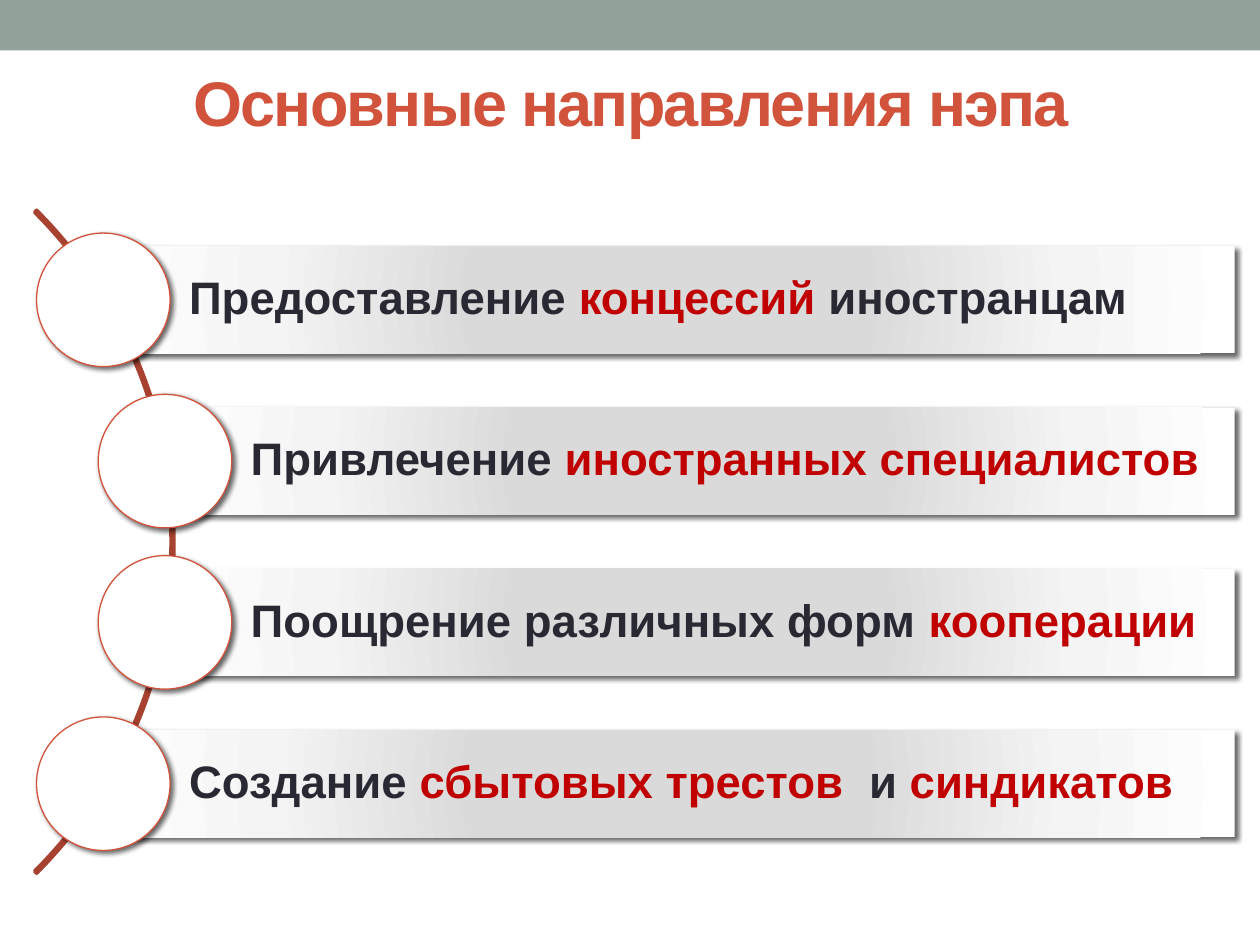
from lxml import etree
from pptx import Presentation
from pptx.dml.color import RGBColor
from pptx.enum.shapes import MSO_SHAPE
from pptx.enum.text import MSO_ANCHOR, MSO_AUTO_SIZE, PP_ALIGN
from pptx.oxml import parse_xml
from pptx.oxml.ns import nsdecls, qn
from pptx.util import Inches, Pt

RECTANGLE, OVAL, BLOCK_ARC = MSO_SHAPE.RECTANGLE, MSO_SHAPE.OVAL, MSO_SHAPE.BLOCK_ARC
MIDDLE, LEFT, CENTER = MSO_ANCHOR.MIDDLE, PP_ALIGN.LEFT, PP_ALIGN.CENTER
NO_AUTOFIT = MSO_AUTO_SIZE.NONE

THEME = {
    "font": "Arial",
    "title_size": Pt(36),
    "item_size": Pt(26),
    "band": RGBColor.from_string("93A299"),
    "title": RGBColor.from_string("D2533C"),
    "arc": RGBColor.from_string("A84230"),
    "text": RGBColor.from_string("292934"),
    "accent": RGBColor.from_string("C00000"),
    "circle": RGBColor.from_string("FFFFFF"),
    "bar_stops": [(0, "DADADA"), (34, "DADADA"), (70, "F4F4F4"), (100, "FFFFFF")],
}

ITEMS = [
    [("Предоставление ", "text"), ("концессий ", "accent"), ("иностранцам", "text")],
    [("Привлечение ", "text"), ("иностранных специалистов", "accent")],
    [("Поощрение различных форм ", "text"), ("кооперации", "accent")],
    [("Создание ", "text"), ("сбытовых трестов  ", "accent"), ("и ", "text"), ("синдикатов", "accent")],
]

FIRST_ROW, ROW_PITCH = 2.38, 1.28
OUTER_COLUMN, INNER_COLUMN, BAR_RIGHT = 0.82, 1.31, 9.8
BAR_HEIGHT, CIRCLE_SIZE, ARC_SIZE = 0.85, 1.06, 7.44


def add_plain_shape(kind, left, top, width, height):
    shape = slide.shapes.add_shape(kind, Inches(left), Inches(top), Inches(width), Inches(height))
    shape.fill.background()
    shape.line.fill.background()
    shape.shadow.inherit = False
    return shape


def add_drop_shadow(shape):
    effects = shape._element.spPr.find(qn("a:effectLst"))
    shadow = etree.SubElement(effects, qn("a:outerShdw"), blurRad=str(Pt(3)), dist=str(Pt(2)),
                              dir="2700000", rotWithShape="0")
    color = etree.SubElement(shadow, qn("a:srgbClr"), val="000000")
    etree.SubElement(color, qn("a:alpha"), val="60000")


presentation = Presentation()
presentation.slide_width = Inches(10)
presentation.slide_height = Inches(7.5)
slide = presentation.slides.add_slide(presentation.slide_layouts[5])

band = add_plain_shape(RECTANGLE, 0, 0, 10, 0.4)
band.fill.solid()
band.fill.fore_color.rgb = THEME["band"]

title = slide.shapes.title
title.left, title.top, title.width, title.height = Inches(0.51), Inches(0.44), Inches(9), Inches(0.73)
title.text_frame.text = "Основные направления нэпа"
title.text_frame.auto_size = NO_AUTOFIT
title.text_frame.vertical_anchor = MIDDLE
title_paragraph = title.text_frame.paragraphs[0]
title_paragraph.alignment = CENTER
title_run = title_paragraph.runs[0]
title_run.font.name = THEME["font"]
title_run.font.size = THEME["title_size"]
title_run.font.bold = True
title_run.font.color.rgb = THEME["title"]
title_run._r.get_or_add_rPr().set("spc", "-100")

arc_top = FIRST_ROW + 1.5 * ROW_PITCH - ARC_SIZE / 2
arc = add_plain_shape(BLOCK_ARC, -6.06, arc_top, ARC_SIZE, ARC_SIZE)
for index, adjustment in enumerate((189, 27, 0.003)):
    arc.adjustments[index] = adjustment
arc.line.color.rgb = THEME["arc"]
arc.line.width = Pt(2.08)

stops = "".join(f'<a:gs pos="{position * 1000}"><a:srgbClr val="{color}"/></a:gs>'
                for position, color in THEME["bar_stops"])
gradient_xml = (f'<a:gradFill {nsdecls("a")} rotWithShape="1"><a:gsLst>{stops}</a:gsLst>'
                '<a:path path="circle"><a:fillToRect l="100000" t="100000" r="100000" b="100000"/>'
                '</a:path></a:gradFill>')

for row, item in enumerate(ITEMS):
    column = OUTER_COLUMN if row in (0, len(ITEMS) - 1) else INNER_COLUMN
    middle = FIRST_ROW + row * ROW_PITCH

    bar = add_plain_shape(RECTANGLE, column, middle - BAR_HEIGHT / 2, BAR_RIGHT - column, BAR_HEIGHT)
    properties = bar._element.spPr
    properties.replace(properties.find(qn("a:noFill")), parse_xml(gradient_xml))
    add_drop_shadow(bar)

    text_frame = bar.text_frame
    text_frame.word_wrap = True
    text_frame.vertical_anchor = MIDDLE
    text_frame.margin_left = Inches(0.68)
    text_frame.margin_top = text_frame.margin_right = text_frame.margin_bottom = Inches(0.07)
    paragraph = text_frame.paragraphs[0]
    paragraph.alignment = LEFT
    paragraph.line_spacing = 0.9
    for words, color in item:
        run = paragraph.add_run()
        run.text = words
        run.font.name = THEME["font"]
        run.font.size = THEME["item_size"]
        run.font.bold = True
        run.font.color.rgb = THEME[color]

    circle = add_plain_shape(OVAL, column - CIRCLE_SIZE / 2, middle - CIRCLE_SIZE / 2, CIRCLE_SIZE, CIRCLE_SIZE)
    circle.fill.solid()
    circle.fill.fore_color.rgb = THEME["circle"]
    circle.line.color.rgb = THEME["title"]
    circle.line.width = Pt(0.75)
    add_drop_shadow(circle)

presentation.save("out.pptx")
